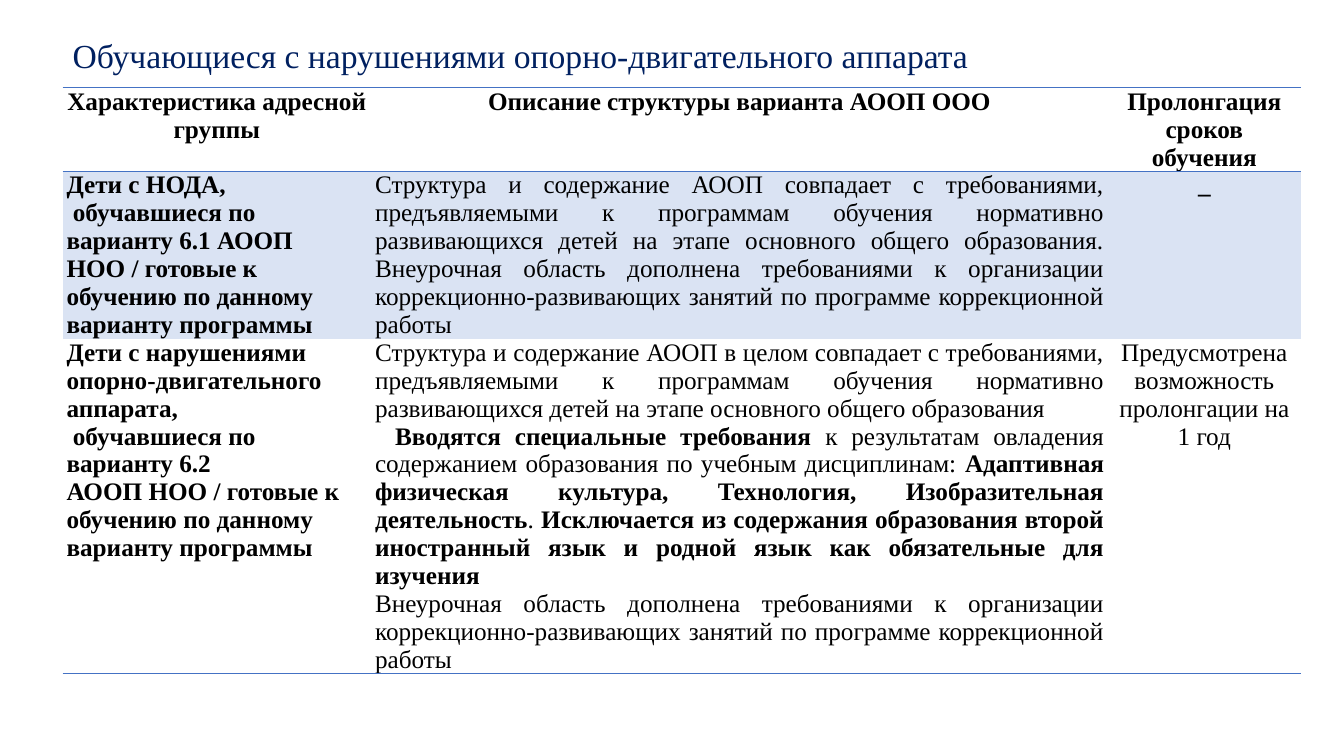
"""Build a slide with a table of programme variants for pupils with motor disorders."""
from lxml import etree
from pptx import Presentation
from pptx.dml.color import RGBColor
from pptx.enum.text import MSO_ANCHOR, MSO_AUTO_SIZE, PP_ALIGN
from pptx.oxml.ns import qn
from pptx.util import Inches, Pt

LEFT, CENTER, JUSTIFY = PP_ALIGN.LEFT, PP_ALIGN.CENTER, PP_ALIGN.JUSTIFY
MIDDLE, NO_FIT = MSO_ANCHOR.MIDDLE, MSO_AUTO_SIZE.NONE
NAVY = RGBColor(0x00, 0x20, 0x60)
BLACK = RGBColor(0x00, 0x00, 0x00)
BLUE = RGBColor(0x44, 0x72, 0xC4)
PALE = RGBColor(0xDA, 0xE3, 0xF3)
FONT = "Times New Roman"
COLS = [3.06, 7.31, 1.91]
ROWS = [0.83, 1.66, 3.32]
X, Y = 0.62, 0.87
ALIGNS = [LEFT, JUSTIFY, CENTER]

EXTRA = ("Внеурочная область дополнена требованиями к организации "
         "коррекционно-развивающих занятий по программе коррекционной работы")
NORM = ("совпадает с требованиями, предъявляемыми к программам обучения нормативно "
        "развивающихся детей на этапе основного общего образования")
READY = "АООП НОО / готовые к обучению по данному варианту программы"
CELLS = [
    [
        [[("Характеристика адресной группы", True)]],
        [[("Описание структуры варианта АООП ООО", True)]],
        [[("Пролонгация сроков обучения", True)]],
    ],
    [
        [[("Дети с НОДА,", True)], [(" обучавшиеся по варианту 6.1 " + READY, True)]],
        [[(f"Структура и содержание АООП {NORM}. {EXTRA}", False)]],
        [[("_", True)]],
    ],
    [
        [[("Дети с нарушениями опорно-двигательного аппарата,", True)],
         [(" обучавшиеся по варианту 6.2", True)],
         [(READY, True)]],
        [[("Структура и содержание АООП в целом " + NORM, False)],
         [("Вводятся специальные требования ", True),
          ("к результатам овладения содержанием образования по учебным дисциплинам: ", False),
          ("Адаптивная физическая культура, Технология, Изобразительная деятельность", True),
          (". ", False),
          ("Исключается из содержания образования второй иностранный язык "
           "и родной язык как обязательные для изучения", True)],
         [(EXTRA, False)]],
        [[("Предусмотрена возможность пролонгации на 1 год", False)]],
    ],
]


def add_run(p, text, size, color, bold=False):
    r = p.add_run()
    r.text = text
    r.font.name, r.font.size, r.font.bold = FONT, Pt(size), bold
    r.font.color.rgb = color


def set_borders(cell, ruled):
    tc_pr = cell._tc.get_or_add_tcPr()
    for i, side in enumerate(["lnL", "lnR", "lnT", "lnB"]):
        ln = etree.Element(qn("a:" + side), w=str(Pt(1)))
        if side in ruled:
            fill = etree.SubElement(ln, qn("a:solidFill"))
            etree.SubElement(fill, qn("a:srgbClr"), val=str(BLUE))
        else:
            etree.SubElement(ln, qn("a:noFill"))
        tc_pr.insert(i, ln)


prs = Presentation()
prs.slide_width, prs.slide_height = Inches(13.33), Inches(7.5)
s = prs.slides.add_slide(prs.slide_layouts[5])

frame = s.shapes.add_table(len(ROWS), len(COLS), Inches(X), Inches(Y),
                           Inches(sum(COLS)), Inches(sum(ROWS)))
table = frame.table
table.first_row = table.horz_banding = False
for col, width in zip(table.columns, COLS):
    col.width = Inches(width)
for row, height in zip(table.rows, ROWS):
    row.height = Inches(height)

RULES = [["lnT", "lnB"], ["lnT"], ["lnB"]]
for i, row in enumerate(CELLS):
    for j, paragraphs in enumerate(row):
        cell = table.cell(i, j)
        cell.margin_left = cell.margin_right = Inches(0.04)
        cell.margin_top = cell.margin_bottom = 0
        if i == 1:
            cell.fill.solid()
            cell.fill.fore_color.rgb = PALE
        else:
            cell.fill.background()
        set_borders(cell, RULES[i])
        tf = cell.text_frame
        for k, runs in enumerate(paragraphs):
            p = tf.add_paragraph() if k else tf.paragraphs[0]
            p.alignment = ALIGNS[j] if i else CENTER
            if len(runs) > 1:
                p._p.get_or_add_pPr().set("indent", str(Inches(0.2)))
            for text, bold in runs:
                add_run(p, text, 18, BLACK, bold)

title = s.shapes.title
title.left, title.top = Inches(X), Inches(-0.15)
title.width, title.height = Inches(11.5), Inches(1.45)
tf = title.text_frame
tf.auto_size, tf.vertical_anchor = NO_FIT, MIDDLE
p = tf.paragraphs[0]
p.alignment, p.line_spacing = LEFT, 0.9
add_run(p, "Обучающиеся с нарушениями опорно-двигательного аппарата", 24, NAVY)

prs.save("out.pptx")
